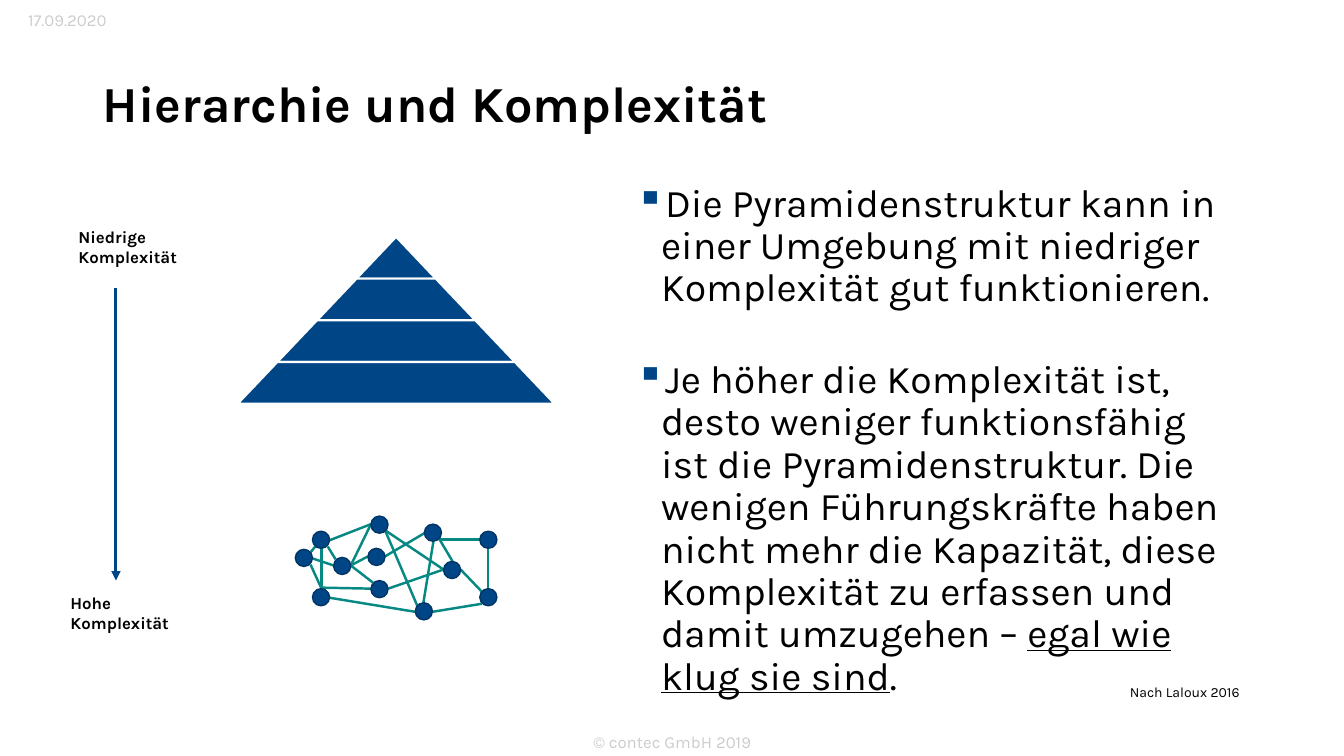
from lxml.etree import SubElement
from pptx import Presentation
from pptx.dml.color import RGBColor
from pptx.enum.shapes import MSO_CONNECTOR as Connector, MSO_SHAPE as Shape
from pptx.enum.text import MSO_ANCHOR as Anchor, PP_ALIGN as Align
from pptx.oxml.ns import qn
from pptx.util import Inches, Pt

COLORS = {
    "black": "000000",
    "gray": "CCCCCC",
    "blue": "004687",
    "navy": "003464",
    "teal": "078983",
    "white": "FFFFFF",
}
COLUMNS, ROWS = 133.33, 75
CELL = Inches(0.1)
NODE_SIZE = 1.7
TIERS = 4
TIER_WIDTH, TIER_HEIGHT = 7.86, 4.14
PYRAMID_AXIS, PYRAMID_TOP = 39.3, 23.5

NODES = [
    (31, 52.7), (29.3, 54.5), (47.6, 52.7), (47.6, 58.4), (31, 58.4), (33.1, 55.3),
    (44, 55.7), (42.1, 52), (36.5, 54.4), (36.8, 57.6), (41.2, 59.8), (36.8, 51.2),
]
LINKS = [
    (30.8, 56, 31.9, 58.4), (31.3, 54.2, 30.8, 54.8), (32.5, 54.2, 33.3, 55.5),
    (31, 55.4, 33.1, 56.1), (31.9, 54.4, 31.9, 58.4), (31.9, 58.3, 36.8, 58.4),
    (32.7, 59.3, 41.2, 60.7), (38.5, 58.4, 44, 56.5), (34.8, 56.1, 36.8, 52),
    (38.2, 55.2, 42.1, 52.9), (42, 59.8, 43, 53.7), (45.7, 56.5, 47.8, 58.7),
    (47.8, 59.9, 42.9, 60.7), (38.2, 52.6, 44, 56.5), (34.8, 56.1, 37, 57.8),
    (44.9, 55.7, 43.6, 53.5), (43.6, 53.5, 47.6, 53.5), (48.4, 58.4, 48.4, 54.4),
    (36.5, 55.2, 34.8, 56.1), (32.7, 53.6, 36.8, 52), (38.2, 52.6, 41.4, 60.1),
]


class Sheet:
    font = "Karla"

    def __init__(self, page):
        self.page = page
        self.layer = page.shapes

    def group(self):
        self.layer = self.page.shapes.add_group_shape().shapes

    def ungroup(self):
        self.layer = self.page.shapes

    def color(self, name):
        return RGBColor.from_string(COLORS[name])

    def cells(self, *lengths):
        return [round(length * CELL) for length in lengths]

    def text(self, place, spans, size, color="black", bold=False, align=Align.LEFT,
             anchor=Anchor.TOP, spacing=1.0, bullet=None):
        box = self.layer.add_textbox(*self.cells(*place))
        frame = box.text_frame
        frame.word_wrap = True
        frame.vertical_anchor = anchor
        para = frame.paragraphs[0]
        para.alignment = align
        para.line_spacing = spacing
        if bullet:
            self.bullet(para, bullet)
        for words, underlined in spans:
            span = para.add_run()
            span.text = words
            span.font.name = self.font
            span.font.size = Pt(size)
            span.font.bold = bold
            span.font.underline = underlined
            span.font.color.rgb = self.color(color)

    def bullet(self, para, mark):
        properties = para._p.get_or_add_pPr()
        indent = Inches(0.25)
        properties.set("marL", str(indent))
        properties.set("indent", str(-indent))
        tint = SubElement(properties, qn("a:buClr"))
        SubElement(tint, qn("a:srgbClr")).set("val", COLORS["blue"])
        SubElement(properties, qn("a:buChar")).set("char", mark)

    def shape(self, kind, place, outline, weight):
        shape = self.layer.add_shape(kind, *self.cells(*place))
        shape.shadow.inherit = False
        shape.fill.solid()
        shape.fill.fore_color.rgb = self.color("blue")
        shape.line.color.rgb = self.color(outline)
        shape.line.width = Pt(weight)
        return shape

    def line(self, ends, color, weight, arrow=False):
        line = self.layer.add_connector(Connector.STRAIGHT, *self.cells(*ends))
        line.line.color.rgb = self.color(color)
        line.line.width = Pt(weight)
        if arrow:
            SubElement(line.line._get_or_add_ln(), qn("a:tailEnd")).set("type", "triangle")
        SubElement(line._element.spPr, qn("a:effectLst"))


def draw_texts(sheet):
    sheet.text((1.8, 0.5, 14.8, 3), [("17.09.2020", False)], 12, "gray")
    sheet.text((9.2, 3.3, 115, 14.5), [("Hierarchie und Komplexität", False)], 36,
               bold=True, anchor=Anchor.MIDDLE, spacing=0.9)
    sheet.text((62.1, 17.7, 62, 15.2), [
        ("Die Pyramidenstruktur kann in einer Umgebung mit niedriger "
         "Komplexität gut funktionieren.", False),
    ], 28, spacing=0.9, bullet="▪")
    sheet.text((62.1, 35.2, 62, 27.7), [
        ("Je höher die Komplexität ist, desto weniger funktionsfähig ist die "
         "Pyramidenstruktur. Die wenigen Führungskräfte haben nicht mehr die "
         "Kapazität, diese Komplexität zu erfassen und damit umzugehen – ", False),
        ("egal wie klug sie sind", True),
        (".", False),
    ], 28, spacing=0.9, bullet="▪")
    sheet.text((111.1, 67.5, 13.1, 2.5), [("Nach Laloux 2016", False)], 10, spacing=0.9)
    sheet.text((44.2, 71.6, 45, 4), [("© contec GmbH 2019", False)], 12, "gray",
               align=Align.CENTER, anchor=Anchor.MIDDLE)


def draw_pyramid(sheet):
    sheet.group()
    for tier in range(TIERS):
        width = TIER_WIDTH * (tier + 1)
        place = (PYRAMID_AXIS - width / 2, PYRAMID_TOP + TIER_HEIGHT * tier, width, TIER_HEIGHT)
        sheet.shape(Shape.TRAPEZOID, place, "white", 1.5).adjustments[0] = 0.95
    sheet.ungroup()


def draw_network(sheet):
    sheet.group()
    for ends in LINKS:
        sheet.line(ends, "teal", 1.75)
    for left, top in NODES:
        sheet.shape(Shape.OVAL, (left, top, NODE_SIZE, NODE_SIZE), "navy", 1)
    sheet.ungroup()


def draw_scale(sheet):
    sheet.text((6.8, 22, 11.9, 5), [("Niedrige Komplexität", False)], 12, bold=True)
    sheet.text((6, 58.3, 11.9, 5), [("Hohe Komplexität", False)], 12, bold=True)
    sheet.line((11.5, 28.6, 11.5, 57.6), "blue", 2.25, arrow=True)


def main():
    deck = Presentation()
    deck.slide_width = round(COLUMNS * CELL)
    deck.slide_height = ROWS * CELL
    sheet = Sheet(deck.slides.add_slide(deck.slide_layouts[6]))
    draw_texts(sheet)
    draw_pyramid(sheet)
    draw_network(sheet)
    draw_scale(sheet)
    deck.save("out.pptx")


if __name__ == "__main__":
    main()
